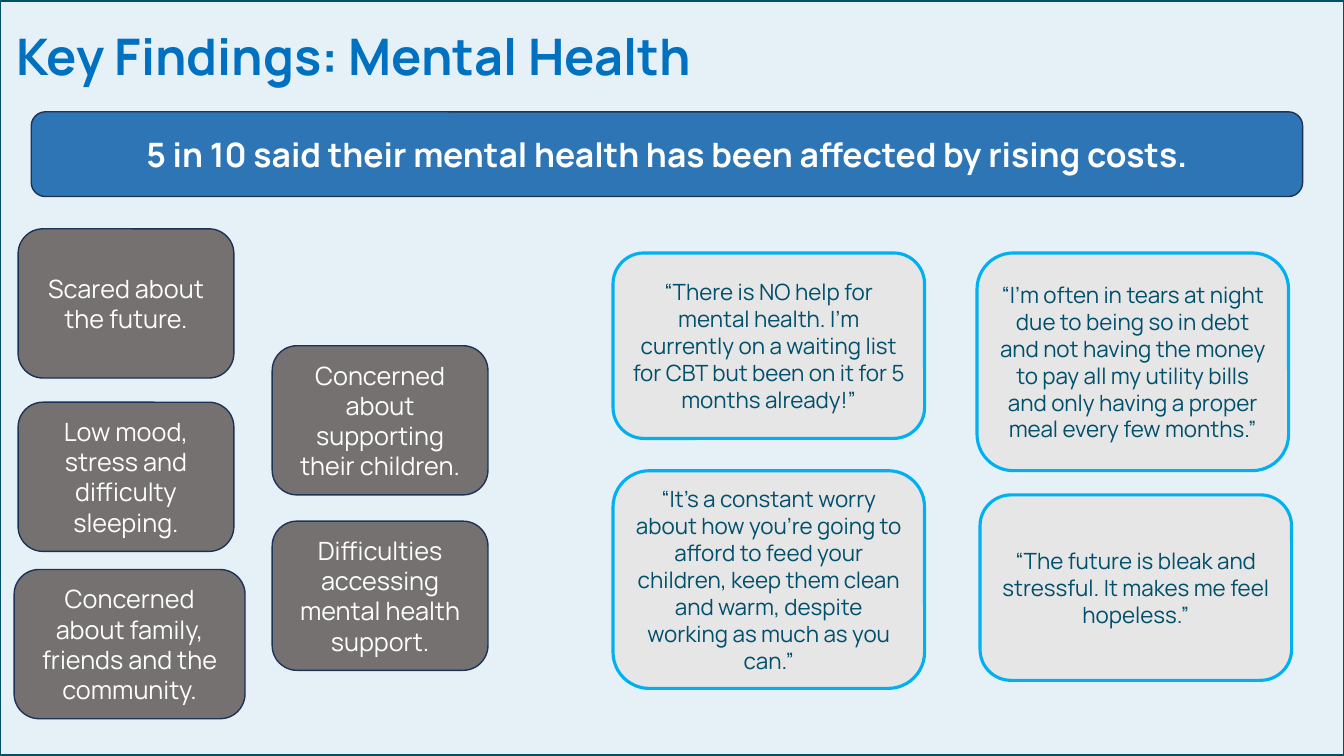
from pptx import Presentation
from pptx import util as u
from pptx.dml.color import RGBColor
from pptx.enum import shapes, text

FONT = "Manrope"
COLOURS = {
    "background": "E6F1F7",
    "title": "0070C0",
    "teal": "004F6B",
    "banner": "2E75B6",
    "navy": "1E3256",
    "concern": "767171",
    "quote": "E7E6E6",
    "sky": "00B0F0",
    "white": "FFFFFF",
}
STYLES = {
    "banner": dict(fill="banner", line="navy", weight=1, size=24, colour="white", bold=True),
    "concern": dict(fill="concern", line="navy", weight=1, size=18, colour="white"),
    "quote": dict(fill="quote", line="sky", weight=2.25, size=16, colour="teal"),
}
CONCERNS = [
    (0.18, 2.27, 2.14, "Scared about the future."),
    (0.18, 3.99, 2.14, "Low mood, stress and difficulty sleeping."),
    (0.14, 5.65, 2.29, "Concerned about family, friends and the community."),
    (2.7, 3.43, 2.14, "Concerned about supporting their children."),
    (2.7, 5.17, 2.14, "Difficulties accessing mental health support."),
]
QUOTES = [
    (6.08, 2.51, 1.84, "“There is NO help for mental health. I’m currently on a waiting list "
                       "for CBT but been on it for 5 months already!”"),
    (9.69, 2.51, 2.16, "“I’m often in tears at night due to being so in debt and not having the "
                       "money to pay all my utility bills and only having a proper meal every "
                       "few months.”"),
    (6.08, 4.67, 2.16, "“It’s a constant worry about how you’re going to afford to feed your "
                       "children, keep them clean and warm, despite working as much as you can.”"),
    (9.72, 4.91, 1.84, "“The future is bleak and stressful. It makes me feel hopeless.”"),
]


def rgb(name):
    return RGBColor.from_string(COLOURS[name])


def place(shape, left, top, width, height):
    shape.left, shape.top = u.Inches(left), u.Inches(top)
    shape.width, shape.height = u.Inches(width), u.Inches(height)


def write(frame, words, size, colour, align, bold=False):
    frame.word_wrap = True
    para = frame.paragraphs[0]
    para.alignment = align
    span = para.add_run()
    span.text = words
    span.font.name = FONT
    span.font.size = u.Pt(size)
    span.font.bold = bold
    span.font.color.rgb = rgb(colour)


def add_title(page, words):
    title = page.shapes.title
    place(title, 0, 0.13, 9.69, 0.84)
    frame = title.text_frame
    frame.auto_size = text.MSO_AUTO_SIZE.NONE
    frame.vertical_anchor = text.MSO_ANCHOR.TOP
    frame.margin_left = frame.margin_right = u.Inches(0.16)
    frame.margin_top = frame.margin_bottom = u.Inches(0.12)
    write(frame, words, 36, "title", text.PP_ALIGN.LEFT, bold=True)


def add_outlined(page, kind, area, line, weight):
    shape = page.shapes.add_shape(kind, *map(u.Inches, area))
    shape.shadow.inherit = False
    shape.line.color.rgb = rgb(line)
    shape.line.width = u.Pt(weight)
    return shape


def add_border(page):
    border = add_outlined(page, shapes.MSO_SHAPE.RECTANGLE, (-0.01, 0, 13.35, 7.5), "teal", 3)
    border.fill.background()


def add_card(page, area, words, fill, line, weight, size, colour, bold=False):
    card = add_outlined(page, shapes.MSO_SHAPE.ROUNDED_RECTANGLE, area, line, weight)
    card.fill.solid()
    card.fill.fore_color.rgb = rgb(fill)
    card.text_frame.vertical_anchor = text.MSO_ANCHOR.MIDDLE
    write(card.text_frame, words, size, colour, text.PP_ALIGN.CENTER, bold)


def main():
    deck = Presentation()
    deck.slide_width, deck.slide_height = u.Inches(13.33), u.Inches(7.5)
    page = deck.slides.add_slide(deck.slide_layouts[5])
    page.background.fill.solid()
    page.background.fill.fore_color.rgb = rgb("background")

    add_border(page)
    add_title(page, "Key Findings: Mental Health")
    add_card(page, (0.31, 1.11, 12.61, 0.84),
             "5 in 10 said their mental health has been affected by rising costs.",
             **STYLES["banner"])
    for left, top, width, words in CONCERNS:
        add_card(page, (left, top, width, 1.48), words, **STYLES["concern"])
    for left, top, height, words in QUOTES:
        add_card(page, (left, top, 3.09, height), words, **STYLES["quote"])

    deck.save("out.pptx")


if __name__ == "__main__":
    main()
